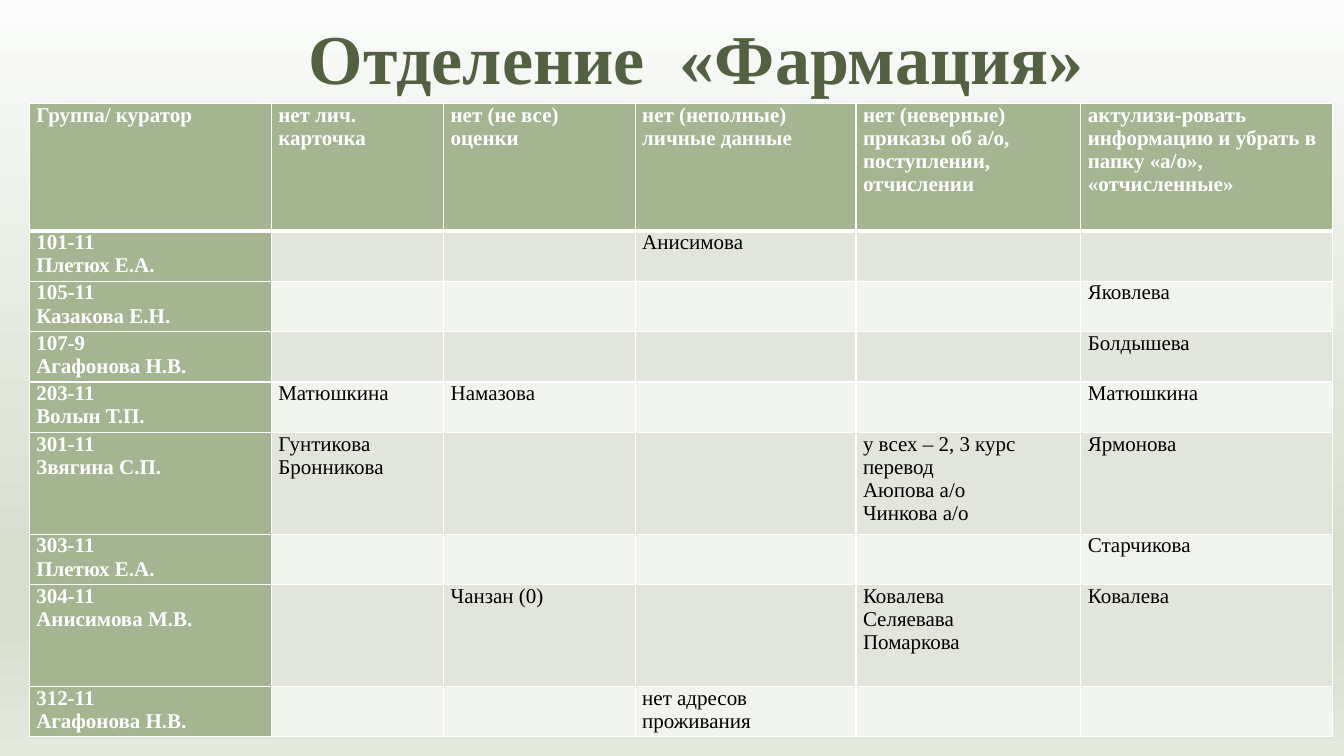
from lxml import etree
from copy import deepcopy
from pptx import Presentation
from pptx.dml.color import RGBColor
from pptx.enum.text import MSO_ANCHOR, PP_ALIGN
from pptx.oxml.ns import qn
from pptx.util import Inches, Pt

CENTER = PP_ALIGN.CENTER
MIDDLE = MSO_ANCHOR.MIDDLE
TOP = MSO_ANCHOR.TOP
TITLE_ONLY = 5

BACKGROUND = [(0, "FAFBFA"), (0.74, "D7DECE"), (0.83, "D7DECE"), (1, "E4E9DE")]
COLUMNS = [2.4, 1.71, 1.9, 2.19, 2.23, 2.5]
ROWS = [1.26, 0.5, 0.5, 0.5, 0.5, 1.01, 0.5, 1.01, 0.5]
CELLS = [
    ["Группа/ куратор", "нет лич. карточка", "нет (не все) оценки",
     "нет (неполные) личные данные",
     "нет (неверные) приказы об а/о, поступлении, отчислении",
     "актулизи-ровать информацию и убрать в папку «а/о», «отчисленные»"],
    ["101-11\nПлетюх Е.А.", "", "", "Анисимова", "", ""],
    ["105-11\nКазакова Е.Н.", "", "", "", "", "Яковлева"],
    ["107-9\nАгафонова Н.В.", "", "", "", "", "Болдышева"],
    ["203-11\nВолын Т.П.", "Матюшкина", "Намазова", "", "", "Матюшкина"],
    ["301-11\nЗвягина С.П.", "Гунтикова\nБронникова", "", "",
     "у всех – 2, 3 курс перевод\nАюпова а/о\nЧинкова а/о", "Ярмонова"],
    ["303-11\nПлетюх Е.А.", "", "", "", "", "Старчикова"],
    ["304-11\nАнисимова М.В.", "", "Чанзан (0)", "",
     "Ковалева\nСеляевава\nПомаркова", "Ковалева"],
    ["312-11\nАгафонова Н.В.", "", "", "нет адресов проживания", "", ""],
]


def color(value):
    return RGBColor.from_string(value)


class SlideBuilder:
    font = "Times New Roman"
    title_color = "536142"
    accent = "A5B592"
    bands = ("F0F3EE", "E1E5DC")
    white = "FFFFFF"
    black = "000000"

    def __init__(self, page):
        self.page = page

    def background(self, stops):
        fill = self.page.background.fill
        fill.gradient()
        fill.gradient_angle = 270
        stop_list = next(self.page.element.iter(qn("a:gsLst")))
        while len(stop_list) < len(stops):
            stop_list.append(deepcopy(stop_list[0]))
        for stop, (position, value) in zip(fill.gradient_stops, stops):
            stop.position = position
            stop.color.rgb = color(value)

    def add_text(self, frame, text, size, value, bold, align=None):
        for index, line in enumerate(text.split("\n")):
            para = frame.paragraphs[0] if index == 0 else frame.add_paragraph()
            para.alignment = align
            para.font.size = Pt(size)
            if line:
                span = para.add_run()
                span.text = line
                span.font.name = self.font
                span.font.size = Pt(size)
                span.font.bold = bold
                span.font.color.rgb = color(value)

    def title(self, text, left, top, width, height):
        box = self.page.shapes.title
        box.left, box.top = Inches(left), Inches(top)
        box.width, box.height = Inches(width), Inches(height)
        frame = box.text_frame
        frame.word_wrap = True
        frame.vertical_anchor = MIDDLE
        self.add_text(frame, text, 50, self.title_color, True, CENTER)

    def borders(self, cell, widths):
        properties = cell._tc.get_or_add_tcPr()
        for index, (side, width) in enumerate(zip("LRTB", widths)):
            line = etree.Element(qn("a:ln" + side), w=str(Pt(width)))
            solid = etree.SubElement(line, qn("a:solidFill"))
            etree.SubElement(solid, qn("a:srgbClr"), val=self.white)
            properties.insert(index, line)

    def cell(self, cell, text, row, column):
        heading = row == 0 or column == 0
        cell.margin_left = cell.margin_right = Inches(0.07)
        cell.margin_top = cell.margin_bottom = 0
        cell.vertical_anchor = TOP
        cell.fill.solid()
        cell.fill.fore_color.rgb = color(self.accent if heading else self.bands[row % 2])
        self.borders(cell, (1, 1, 3 if row == 1 else 1, 3 if row == 0 else 1))
        self.add_text(cell.text_frame, text, 15, self.white if heading else self.black, heading)

    def table(self, left, top, columns, rows, cells):
        table = self.page.shapes.add_table(
            len(rows), len(columns), Inches(left), Inches(top),
            Inches(sum(columns)), Inches(sum(rows))).table
        for column, width in zip(table.columns, columns):
            column.width = Inches(width)
        for row, height in zip(table.rows, rows):
            row.height = Inches(height)
        for row, texts in enumerate(cells):
            for column, text in enumerate(texts):
                self.cell(table.cell(row, column), text, row, column)


def main():
    deck = Presentation()
    deck.slide_width, deck.slide_height = Inches(13.33), Inches(7.5)
    builder = SlideBuilder(deck.slides.add_slide(deck.slide_layouts[TITLE_ONLY]))
    builder.background(BACKGROUND)
    builder.title("Отделение  «Фармация»", 2.78, 0.09, 8.26, 0.94)
    builder.table(0.29, 1.03, COLUMNS, ROWS, CELLS)
    deck.save("out.pptx")


if __name__ == "__main__":
    main()
